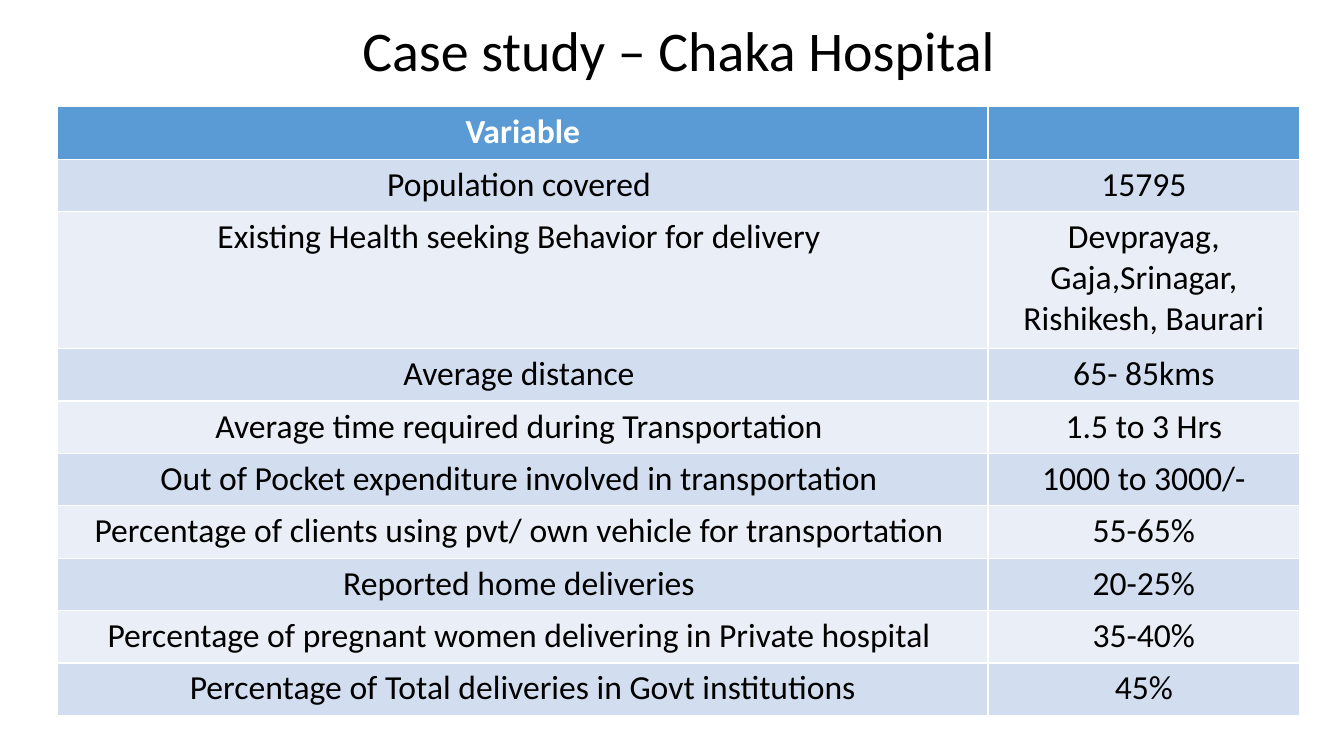
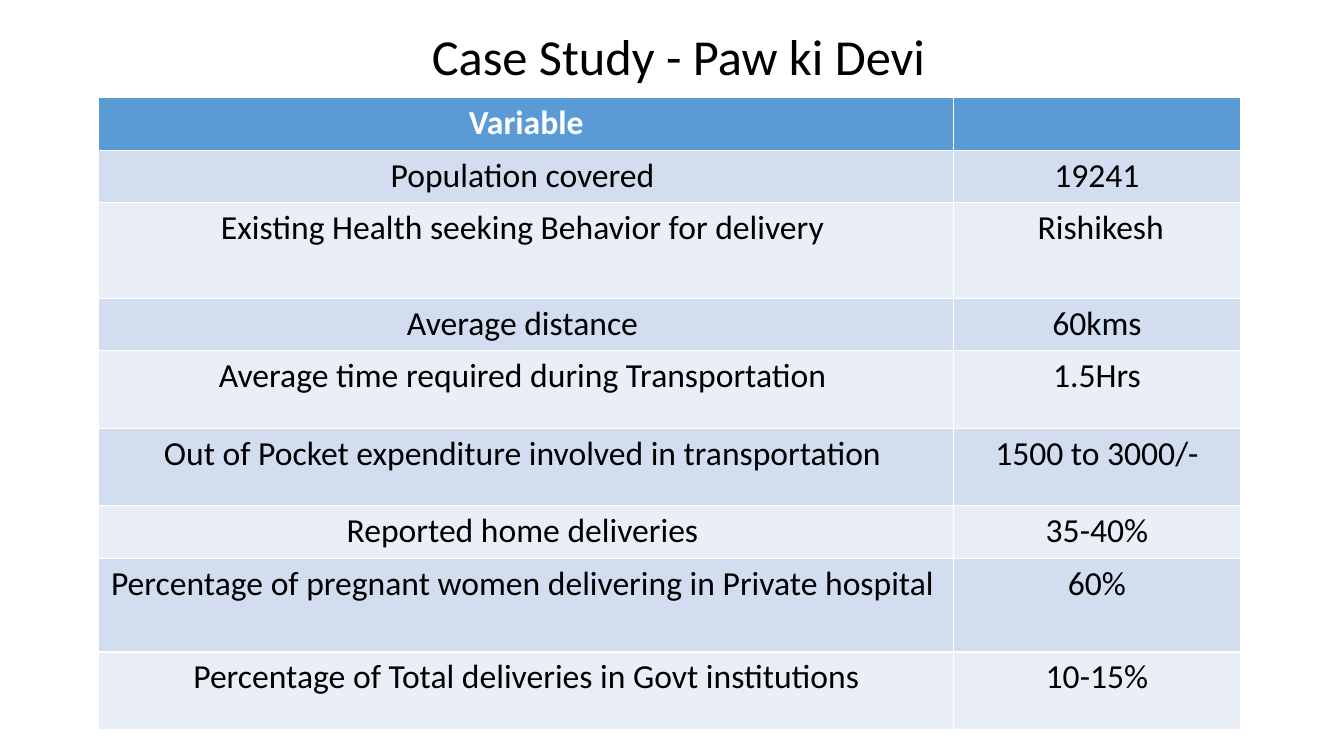
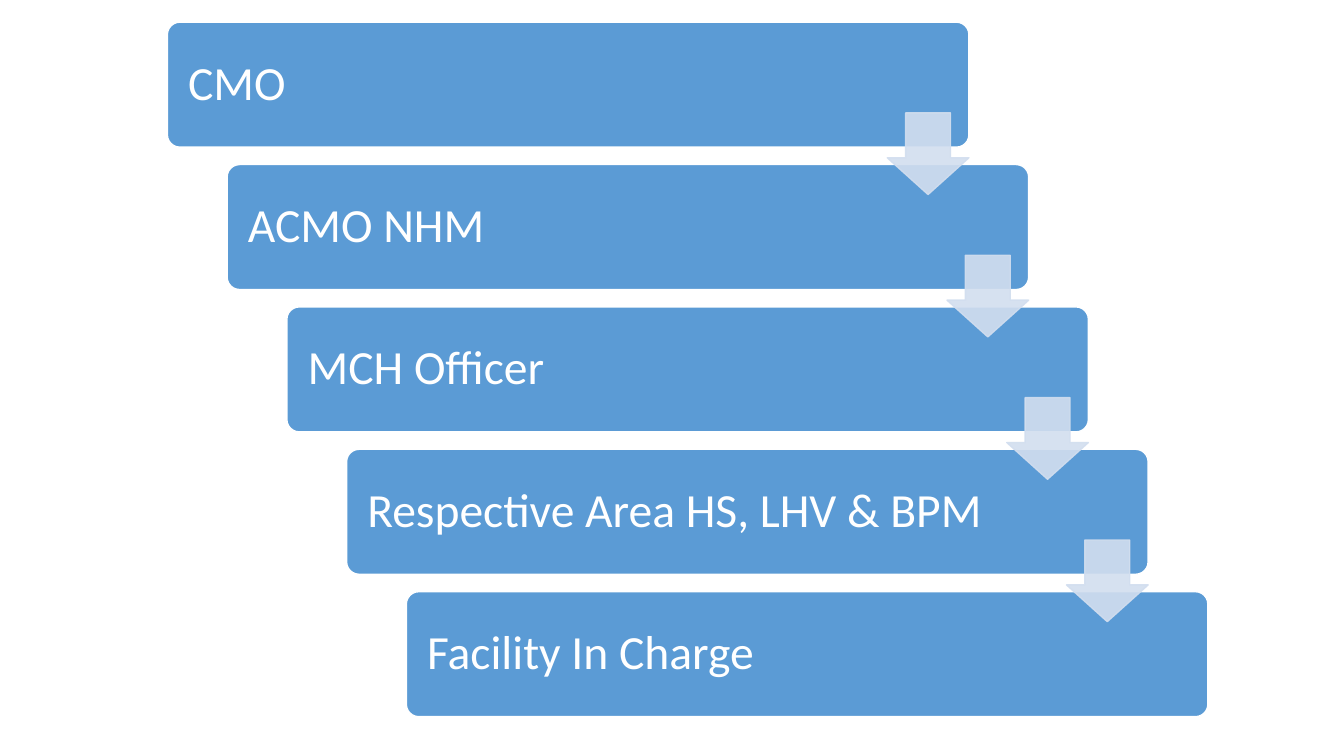
from lxml import etree
from pptx import Presentation
from pptx import util as u
from pptx.dml.color import RGBColor
from pptx.enum import shapes, text
from pptx.oxml import ns

COLORS = {"blue": "5B9BD5", "band": "D2DEEF", "pale": "EAEFF7",
          "white": "FFFFFF", "black": "000000"}
FONT = "Calibri"
TITLE_ONLY, BLANK = 5, 6


def write(frame, words, size, color="black", bold=False,
          align=text.PP_ALIGN.CENTER, spacing=None):
    paragraph = frame.paragraphs[0]
    paragraph.alignment = align
    paragraph.line_spacing = spacing
    run = paragraph.add_run()
    run.text = words
    run.font.name = FONT
    run.font.size = u.Pt(size)
    run.font.bold = bold
    run.font.color.rgb = RGBColor.from_string(COLORS[color])


def add_block(slide, preset, box, adjustments, color, line_color, opacity=100):
    shape = slide.shapes.add_shape(preset, *[u.Inches(length) for length in box])
    for index, value in enumerate(adjustments):
        shape.adjustments[index] = value
    shape.shadow.inherit = False
    shape.fill.solid()
    shape.fill.fore_color.rgb = RGBColor.from_string(COLORS[color])
    shape.line.color.rgb = RGBColor.from_string(COLORS[line_color])
    shape.line.width = u.Pt(1)
    if opacity < 100:
        for tint in shape._element.spPr.iter(ns.qn("a:srgbClr")):
            etree.SubElement(tint, ns.qn("a:alpha"), val=str(opacity * 1000))
    return shape


presentation = Presentation()
presentation.slide_width = u.Inches(13.33)
presentation.slide_height = u.Inches(7.5)

POPULATION = "Population covered "
BEHAVIOR = "Existing Health seeking Behavior for delivery "
DISTANCE = "Average distance "
TIME = "Average time required during Transportation "
EXPENDITURE = "Out of Pocket expenditure involved in transportation "
VEHICLE = "Percentage of clients using pvt/ own vehicle for transportation "
HOME = "Reported home deliveries "
PRIVATE = "Percentage of pregnant women delivering in Private hospital "
GOVT = "Percentage of Total deliveries in Govt institutions"

case_studies = [
    {"title": "Case study – Chaka Hospital", "size": 40,
     "title_top": 0, "title_height": 1.06,
     "left": 0.57, "top": 1.06, "columns": [9.23, 3.09],
     "row": 0.52, "tall_rows": {BEHAVIOR: 1.36},
     "values": {POPULATION: "15795",
                BEHAVIOR: "Devprayag, Gaja,Srinagar, Rishikesh, Baurari",
                DISTANCE: "65- 85kms",
                TIME: "1.5 to 3 Hrs",
                EXPENDITURE: "1000 to 3000/-",
                VEHICLE: "55-65%",
                HOME: "20-25%",
                PRIVATE: "35-40%",
                GOVT: "45%"}},
    {"title": "Case Study - Paw ki Devi", "size": 36,
     "title_top": 0.2, "title_height": 0.77,
     "left": 0.98, "top": 0.97, "columns": [8.48, 2.84],
     "row": 0.52,
     "tall_rows": {BEHAVIOR: 0.95, TIME: 0.77, EXPENDITURE: 0.77,
                   PRIVATE: 0.93, GOVT: 0.77},
     "values": {POPULATION: "19241",
                BEHAVIOR: " Rishikesh",
                DISTANCE: "60kms",
                TIME: "1.5Hrs",
                EXPENDITURE: "1500 to 3000/-",
                HOME: "35-40%",
                PRIVATE: "60%",
                GOVT: "10-15%"}},
]

for study in case_studies:
    slide = presentation.slides.add_slide(presentation.slide_layouts[TITLE_ONLY])
    title = slide.shapes.title
    title.left, title.width = u.Inches(0.98), u.Inches(11.5)
    title.top = u.Inches(study["title_top"])
    title.height = u.Inches(study["title_height"])
    title.text_frame.vertical_anchor = text.MSO_ANCHOR.MIDDLE
    write(title.text_frame, study["title"], study["size"], spacing=0.9)

    rows = [("Variable", "")] + list(study["values"].items())
    heights = [study["tall_rows"].get(label, study["row"]) for label, value in rows]
    table = slide.shapes.add_table(
        len(rows), 2, u.Inches(study["left"]), u.Inches(study["top"]),
        u.Inches(sum(study["columns"])), u.Inches(sum(heights))).table
    for column, width in zip(table.columns, study["columns"]):
        column.width = u.Inches(width)
    for row_index, row in enumerate(rows):
        table.rows[row_index].height = u.Inches(heights[row_index])
        header = row_index == 0
        fill = "blue" if header else "band" if row_index % 2 else "pale"
        for column_index, words in enumerate(row):
            cell = table.cell(row_index, column_index)
            cell.fill.solid()
            cell.fill.fore_color.rgb = RGBColor.from_string(COLORS[fill])
            if words:
                write(cell.text_frame, words, 24,
                      color="white" if header else "black", bold=header)

slide = presentation.slides.add_slide(presentation.slide_layouts[BLANK])
levels = ["CMO", "ACMO NHM", "MCH Officer", "Respective Area HS, LHV & BPM",
          "Facility In Charge"]
left, top, width, height = 1.66, 0.22, 7.95, 1.24
step_right = (4.03 - left) / (len(levels) - 1)
step_down = (5.87 - top) / (len(levels) - 1)
arrow = 0.81

for index, level in enumerate(levels):
    shape = add_block(
        slide, shapes.MSO_SHAPE.ROUNDED_RECTANGLE,
        (left + index * step_right, top + index * step_down, width, height),
        [0.1], "blue", "white")
    frame = shape.text_frame
    frame.word_wrap = True
    frame.margin_left = frame.margin_right = u.Inches(0.17)
    frame.vertical_anchor = text.MSO_ANCHOR.MIDDLE
    write(frame, level, 34, color="white", align=text.PP_ALIGN.LEFT, spacing=0.9)

for index in range(len(levels) - 1):
    add_block(
        slide, shapes.MSO_SHAPE.DOWN_ARROW,
        (left + width - arrow + index * step_right,
         top + 0.9 + index * step_down, arrow, arrow),
        [0.55, 0.45], "band", "band", opacity=90)

presentation.save("out.pptx")
